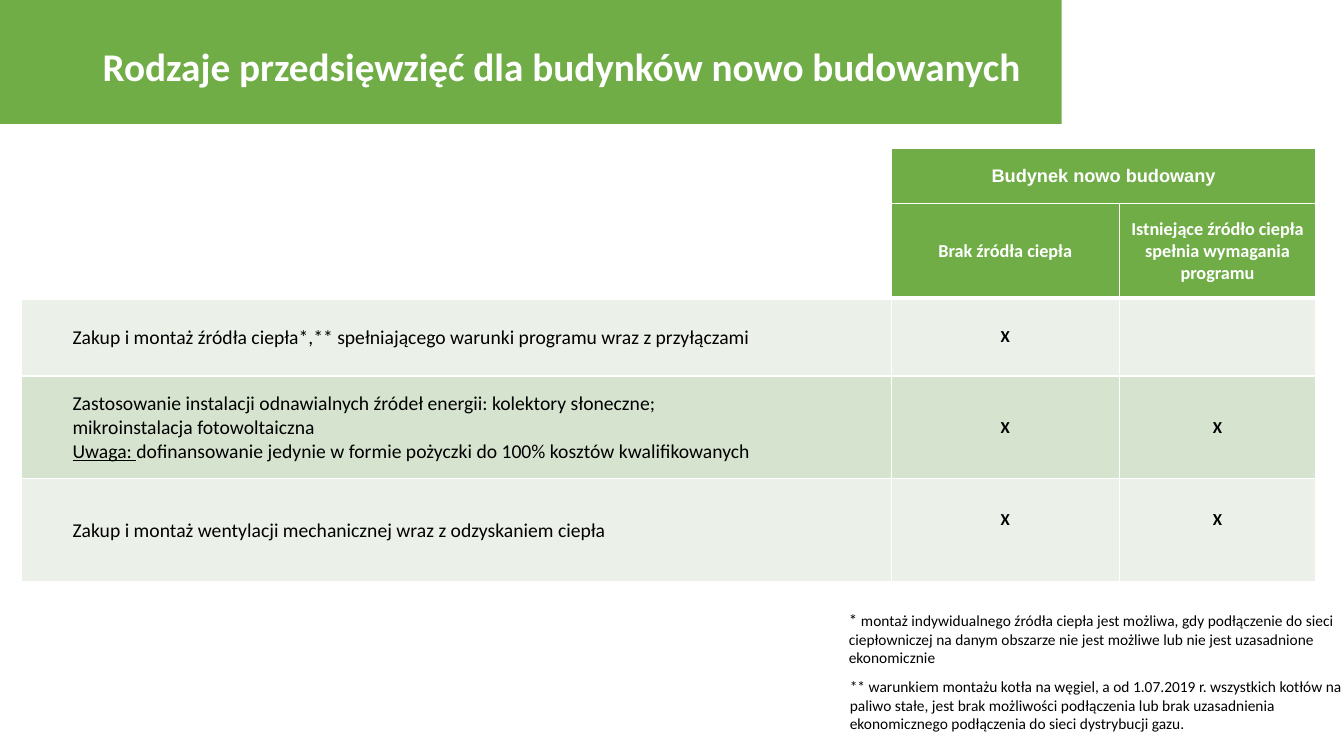
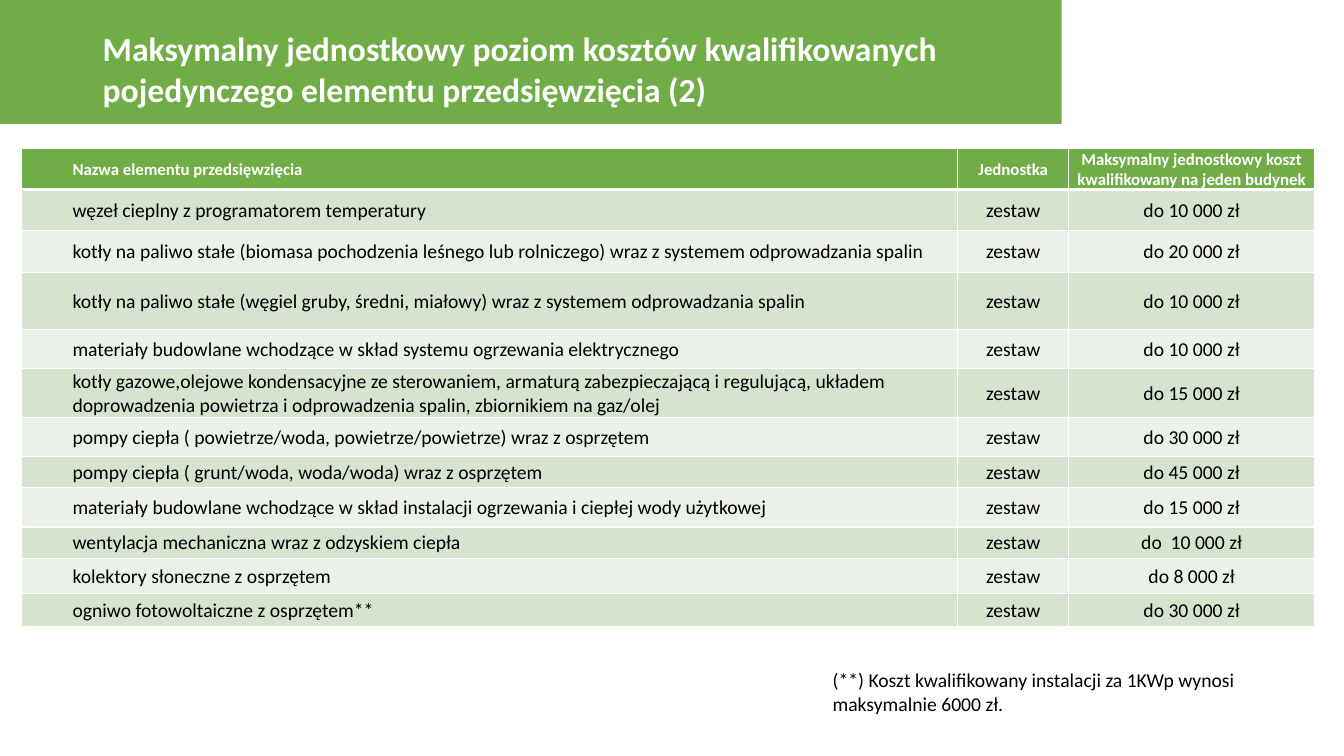
from lxml import etree
from pptx import Presentation
from pptx.dml.color import RGBColor
from pptx.enum.shapes import MSO_SHAPE
from pptx.enum.text import MSO_ANCHOR, PP_ALIGN
from pptx.oxml.ns import qn
from pptx.util import Inches, Pt

RECTANGLE = MSO_SHAPE.RECTANGLE
MIDDLE, TOP = MSO_ANCHOR.MIDDLE, MSO_ANCHOR.TOP
LEFT, CENTER = PP_ALIGN.LEFT, PP_ALIGN.CENTER

FONT = "Calibri"
GREEN, SAGE, MIST = "70AD47", "D5E3CF", "EBF1E9"
WHITE, BLACK = "FFFFFF", "000000"
TABLE_LEFT, TABLE_TOP = 0.21, 1.47
TEXT_INDENT = 0.5
TIGHT = (0.01, 0.01, 0.01, 0)
ROOMY = (0.1, 0.05, 0.1, 0.05)
RAISED = (0.1, 0.05, 0.1, 0.25)

PROJECT_TYPES = [
    ("Zakup i montaż źródła ciepła*,** spełniającego warunki programu wraz z przyłączami",
     "X", ""),
    ("Zastosowanie instalacji odnawialnych źródeł energii: kolektory słoneczne;\n"
     "mikroinstalacja fotowoltaiczna\vUwaga: |"
     "dofinansowanie jedynie w formie pożyczki do 100% kosztów kwalifikowanych",
     "X", "X"),
    ("Zakup i montaż wentylacji mechanicznej wraz z odzyskaniem ciepła", "X", "X"),
]
COST_HEADER = ("Nazwa elementu przedsięwzięcia", "Jednostka",
               "Maksymalny jednostkowy koszt kwalifikowany na jeden budynek")
COST_UNIT = "zestaw"
COST_LIMITS = [
    ("węzeł cieplny z programatorem temperatury", "do 10 000 zł"),
    ("kotły na paliwo stałe (biomasa pochodzenia leśnego lub rolniczego) "
     "wraz z systemem odprowadzania spalin", "do 20 000 zł"),
    ("kotły na paliwo stałe (węgiel gruby, średni, miałowy) "
     "wraz z systemem odprowadzania spalin", "do 10 000 zł"),
    ("materiały budowlane wchodzące w skład systemu ogrzewania elektrycznego",
     "do 10 000 zł"),
    ("kotły gazowe,olejowe kondensacyjne ze sterowaniem, armaturą zabezpieczającą "
     "i regulującą, układem doprowadzenia powietrza i odprowadzenia spalin, "
     "zbiornikiem na gaz/olej", "do 15 000 zł"),
    ("pompy ciepła ( powietrze/woda, powietrze/powietrze) wraz z osprzętem",
     "do 30 000 zł"),
    ("pompy ciepła ( grunt/woda, woda/woda) wraz z osprzętem", "do 45 000 zł"),
    ("materiały budowlane wchodzące w skład instalacji ogrzewania "
     "i ciepłej wody użytkowej", "do 15 000 zł"),
    ("wentylacja mechaniczna wraz z odzyskiem ciepła", "do  10 000 zł"),
    ("kolektory słoneczne z osprzętem", "do 8 000 zł"),
    ("ogniwo fotowoltaiczne z osprzętem**", "do 30 000 zł"),
]


def color(value):
    return RGBColor.from_string(value)


def write_text(frame, text, size, tone=BLACK, bold=False, align=LEFT, font=FONT):
    """Write text; a newline starts a paragraph and a bar starts a run."""
    for index, line in enumerate(text.split("\n")):
        para = frame.add_paragraph() if index else frame.paragraphs[0]
        first, *others = line.split("|")
        para.text = first
        for piece in others:
            para.add_run().text = piece
        para.alignment = align
        for span in para.runs:
            span.font.name = font
            span.font.size = Pt(size)
            span.font.bold = bold
            span.font.color.rgb = color(tone)
        for line_break in para._p.findall(qn("a:br")):
            etree.SubElement(line_break, qn("a:rPr"), sz=str(size * 100))


def add_text(page, box, text, size, tone=BLACK, bold=False, anchor=TOP):
    shape = page.shapes.add_textbox(*map(Inches, box))
    frame = shape.text_frame
    frame.word_wrap = True
    frame.vertical_anchor = anchor
    write_text(frame, text, size, tone, bold)
    return frame


def add_page(deck, title, title_size, line_spacing=1.0):
    """Add a blank page with the green band and its title."""
    page = deck.slides.add_slide(deck.slide_layouts[6])
    band = page.shapes.add_shape(RECTANGLE, 0, 0, Inches(10.53), Inches(1.23))
    band.shadow.inherit = False
    band.fill.solid()
    band.fill.fore_color.rgb = color(GREEN)
    band.line.fill.background()
    frame = add_text(page, (0.92, 0.21, 9.55, 0.94), title, title_size, WHITE, True, MIDDLE)
    frame.paragraphs[0].line_spacing = line_spacing
    return page


def set_borders(cell, top=1, bottom=1):
    properties = cell._tc.get_or_add_tcPr()
    for index, (side, width) in enumerate(zip("LRTB", (1, 1, top, bottom))):
        line = etree.Element(qn(f"a:ln{side}"), w=str(Pt(width)))
        fill = etree.SubElement(line, qn("a:solidFill"))
        etree.SubElement(fill, qn("a:srgbClr"), val=WHITE)
        properties.insert(index, line)


def add_table(page, widths, heights, header_rows):
    """Add a plain table with white rules, heavier below the header."""
    frame = page.shapes.add_table(
        len(heights), len(widths), Inches(TABLE_LEFT), Inches(TABLE_TOP),
        Inches(sum(widths)), Inches(sum(heights)))
    table = frame.table
    table.first_row = table.horz_banding = False
    for column, width in zip(table.columns, widths):
        column.width = Inches(width)
    for index, (row, height) in enumerate(zip(table.rows, heights)):
        row.height = Inches(height)
        for cell in row.cells:
            set_borders(cell, 3 if index == header_rows else 1,
                        3 if index == header_rows - 1 else 1)
    return table


def fill_cell(cell, text, fill, size, tone=BLACK, bold=False, align=CENTER,
              margins=ROOMY, font=FONT):
    cell.fill.solid()
    cell.fill.fore_color.rgb = color(fill)
    cell.vertical_anchor = MIDDLE
    (cell.margin_left, cell.margin_top,
     cell.margin_right, cell.margin_bottom) = map(Inches, margins)
    write_text(cell.text_frame, text, size, tone, bold, align, font)


def fill_name_cell(cell, text, fill, size=14, tone=BLACK, bold=False):
    """Fill a cell of the first column, whose text is indented."""
    fill_cell(cell, text, fill, size, tone, bold, LEFT, TIGHT)
    for para in cell.text_frame.paragraphs:
        properties = para._p.get_or_add_pPr()
        properties.set("marL", str(Inches(TEXT_INDENT)))
        properties.set("indent", "0")


def add_project_table(page):
    table = add_table(page, (8.63, 2.26, 1.95), (0.55, 0.94, 0.77, 1.02, 1.02), 2)
    table.cell(0, 0).merge(table.cell(1, 0))
    table.cell(0, 1).merge(table.cell(0, 2))
    fill_cell(table.cell(0, 0), "", WHITE, 13)
    fill_cell(table.cell(0, 1), "Budynek nowo budowany", GREEN, 13, WHITE, True, font="Arial")
    headings = ("Brak źródła ciepła", "Istniejące źródło ciepła spełnia wymagania programu")
    for column, heading in enumerate(headings, 1):
        fill_cell(table.cell(1, column), heading, GREEN, 13, WHITE, True)
    last = len(PROJECT_TYPES) - 1
    for index, (name, *marks) in enumerate(PROJECT_TYPES):
        fill = SAGE if index % 2 else MIST
        fill_name_cell(table.cell(index + 2, 0), name, fill)
        for column, mark in enumerate(marks, 1):
            fill_cell(table.cell(index + 2, column), mark, fill, 12, bold=True,
                      margins=RAISED if index == last else ROOMY)
    remark = table.cell(3, 0).text_frame.paragraphs[1].runs[1]
    remark.font.underline = True


def add_cost_table(page):
    heights = (0.41, 0.41, 0.41, 0.57, 0.39, 0.48, 0.39, 0.31, 0.39, 0.31, 0.35, 0.33)
    table = add_table(page, (9.29, 1.1, 2.44), heights, 1)
    rows = [COST_HEADER] + [(name, COST_UNIT, limit) for name, limit in COST_LIMITS]
    for index, (name, *details) in enumerate(rows):
        if index == 0:
            style = (GREEN, 12, WHITE, True)
        else:
            style = (SAGE if index % 2 else MIST, 14)
        fill_name_cell(table.cell(index, 0), name, *style)
        for column, detail in enumerate(details, 1):
            fill_cell(table.cell(index, column), detail, *style, margins=TIGHT)


def build_project_page(deck):
    page = add_page(deck, "Rodzaje przedsięwzięć dla budynków nowo budowanych", 28, 0.9)
    add_project_table(page)
    add_text(page, (8.33, 6.67, 5.12, 0.66),
             "** warunkiem montażu kotła na węgiel, a od 1.07.2019 r. wszystkich kotłów na "
             "paliwo stałe, jest brak możliwości podłączenia lub brak uzasadnienia "
             "ekonomicznego podłączenia do sieci dystrybucji gazu.", 11)
    note = add_text(page, (8.32, 6, 5.22, 0.67),
                    "* |montaż indywidualnego źródła ciepła jest możliwa, gdy podłączenie do "
                    "sieci ciepłowniczej na danym obszarze nie jest możliwe lub nie jest "
                    "uzasadnione ekonomicznie", 11)
    note.paragraphs[0].runs[0].font.size = Pt(12)


def build_cost_page(deck):
    page = add_page(deck, "Maksymalny jednostkowy poziom kosztów kwalifikowanych "
                          "pojedynczego elementu przedsięwzięcia (2)", 24)
    add_cost_table(page)
    add_text(page, (8.16, 6.58, 4.88, 0.57),
             "(**) Koszt kwalifikowany instalacji za 1KWp wynosi maksymalnie 6000 zł.", 14)


def main():
    deck = Presentation()
    deck.slide_width, deck.slide_height = Inches(13.33), Inches(7.5)
    build_project_page(deck)
    build_cost_page(deck)
    deck.save("out.pptx")


if __name__ == "__main__":
    main()
